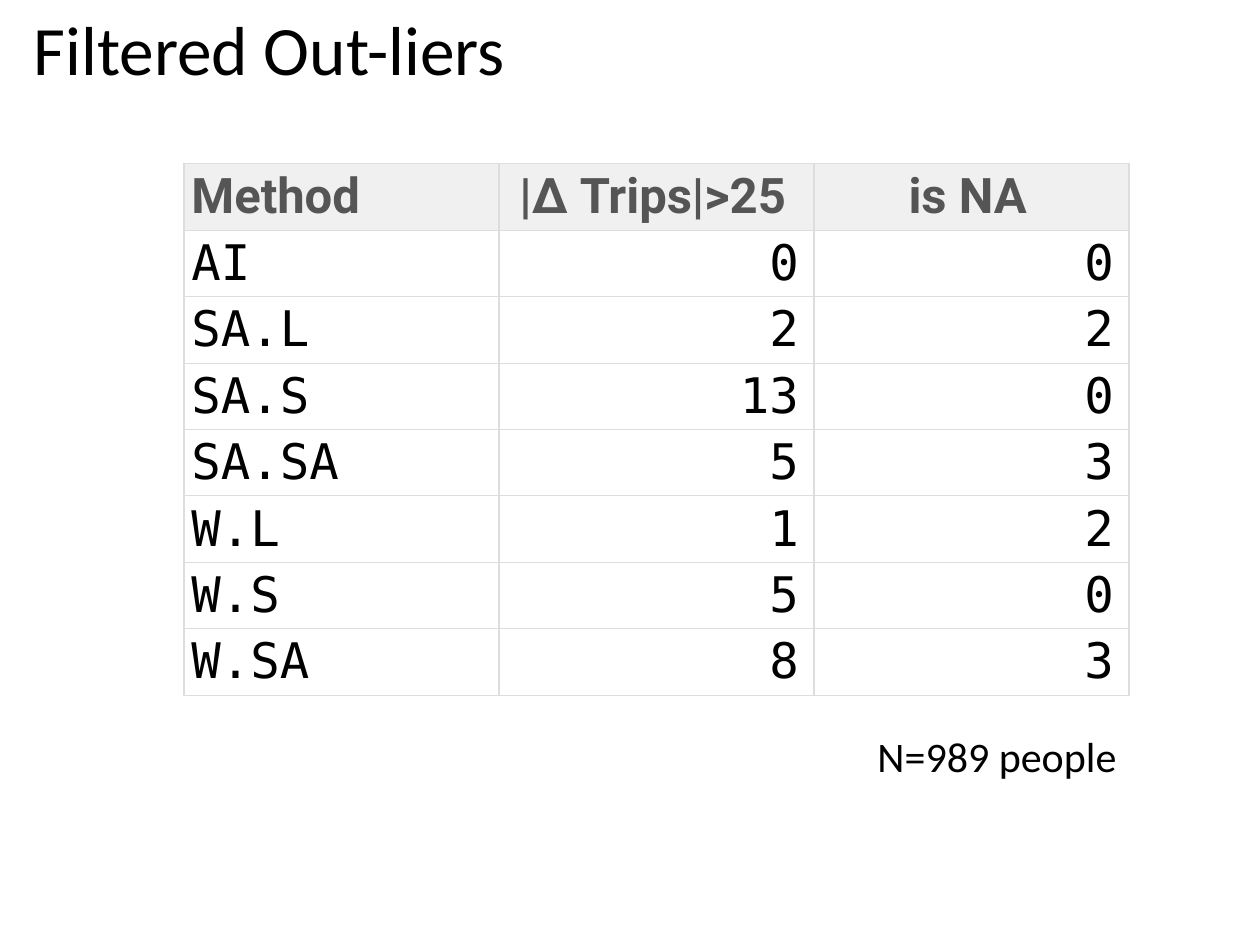
from lxml.etree import SubElement
from pptx import Presentation
from pptx.dml.color import RGBColor
from pptx.enum.text import MSO_ANCHOR as Anchor, PP_ALIGN as Align
from pptx.oxml.ns import qn
from pptx.util import Inches, Pt

HEADINGS = ("Method", "|Δ Trips|>25", "is NA")
COUNTS = (
    ("AI", 0, 0),
    ("SA.L", 2, 2),
    ("SA.S", 13, 0),
    ("SA.SA", 5, 3),
    ("W.L", 1, 2),
    ("W.S", 5, 0),
    ("W.SA", 8, 3),
)
GRID = "DDDDDD"


def color(hex_code):
    """Turn a hex string into a colour."""
    return RGBColor.from_string(hex_code)


def write(frame, text, size=28, font="Calibri", ink="000000", bold=False, align=Align.LEFT):
    """Put one formatted paragraph into a text frame."""
    paragraph = frame.paragraphs[0]
    paragraph.alignment = align
    run = paragraph.add_run()
    run.text = text
    run.font.size = Pt(size)
    run.font.name = font
    run.font.bold = bold
    run.font.color.rgb = color(ink)


def add_label(slide, text, left, top, width, height, anchor=Anchor.TOP, wrap=True, **style):
    """Add a text box with one formatted line."""
    frame = slide.shapes.add_textbox(
        Inches(left), Inches(top), Inches(width), Inches(height)
    ).text_frame
    frame.word_wrap = wrap
    frame.vertical_anchor = anchor
    write(frame, text, **style)


def outline(cell):
    """Draw a thin grid line on all four sides of a cell."""
    properties = cell._tc.get_or_add_tcPr()
    for side in ("a:lnL", "a:lnR", "a:lnT", "a:lnB"):
        line = SubElement(properties, qn(side), w=str(Pt(0.75)))
        SubElement(SubElement(line, qn("a:solidFill")), qn("a:srgbClr"), val=GRID)


def fill_cell(cell, text, fill=None, **style):
    """Set the borders, background, margins and text of a cell."""
    outline(cell)
    if fill:
        cell.fill.solid()
        cell.fill.fore_color.rgb = color(fill)
    else:
        cell.fill.background()
    cell.margin_left, cell.margin_right = Inches(0.06), Inches(0.12)
    cell.margin_top = cell.margin_bottom = Inches(0.03)
    cell.vertical_anchor = Anchor.MIDDLE
    write(cell.text_frame, text, **style)


def add_counts(slide):
    """Add the table of filtered outliers per method."""
    table = slide.shapes.add_table(
        len(COUNTS) + 1, len(HEADINGS), Inches(1.46), Inches(1.3), Inches(7.5), Inches(4.1)
    ).table
    table.first_row = table.horz_banding = False
    for column, heading in enumerate(HEADINGS):
        fill_cell(table.cell(0, column), heading, fill="F0F0F0", font="Roboto",
                  ink="555555", bold=True, align=Align.CENTER if column else Align.LEFT)
    for row, record in enumerate(COUNTS, start=1):
        for column, value in enumerate(record):
            fill_cell(table.cell(row, column), str(value), font="DejaVu Sans Mono",
                      align=Align.RIGHT if column else Align.LEFT)


def main():
    """Build and save the slide."""
    deck = Presentation()
    deck.slide_width, deck.slide_height = Inches(10), Inches(7.5)
    slide = deck.slides.add_slide(deck.slide_layouts[6])
    add_label(slide, "Filtered Out-liers", 0.17, 0, 8.83, 0.75, anchor=Anchor.MIDDLE, size=39.6)
    add_counts(slide)
    add_label(slide, "N=989 people", 6.84, 5.75, 2.12, 0.5, wrap=False, size=24, align=Align.RIGHT)
    deck.save("out.pptx")


if __name__ == "__main__":
    main()
